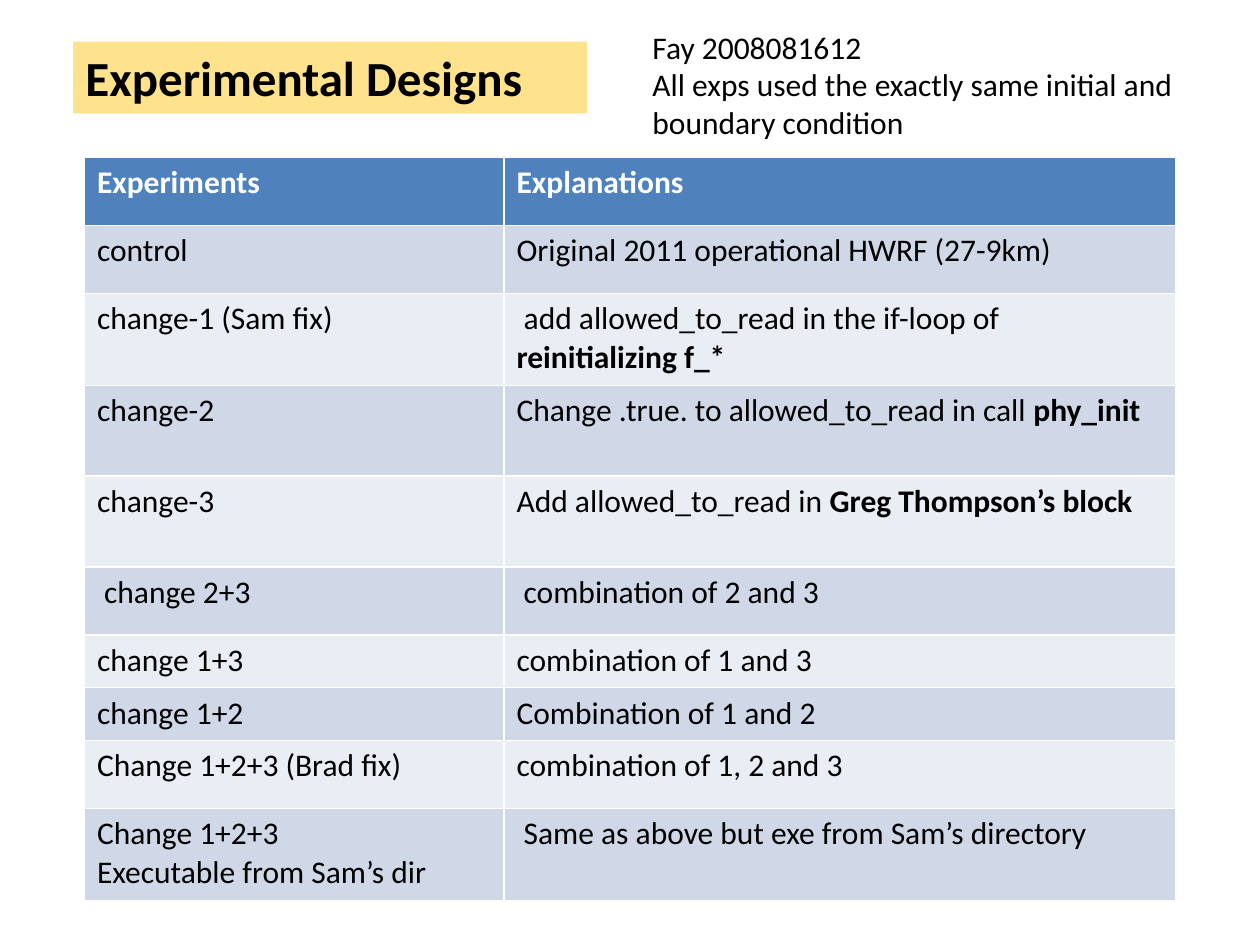
from dataclasses import dataclass
from typing import NamedTuple

from pptx import Presentation
from pptx.dml.color import RGBColor
from pptx.enum.shapes import MSO_SHAPE
from pptx.enum.text import MSO_ANCHOR, MSO_AUTO_SIZE, PP_ALIGN
from pptx.oxml.ns import qn
from pptx.slide import Slide
from pptx.util import Inches, Pt
from lxml.etree import SubElement


@dataclass(frozen=True)
class Theme:
    font: str = "Calibri"
    body: int = 18
    title: int = 28
    ink: str = "000000"
    white: str = "FFFFFF"
    head: str = "4F81BD"
    bands: tuple[str, str] = ("E9EDF4", "D0D8E8")
    gold: str = "FFC000"
    alpha: int = 45


class Box(NamedTuple):
    left: float
    top: float
    width: float
    height: float

    def place(self) -> list[int]:
        return [Inches(n) for n in self]


class Row(NamedTuple):
    height: float
    name: str
    note: str
    strong: str = ""


THEME = Theme()
COLS = (3.33, 5.33)
ROWS = [
    Row(0.54, "Experiments", "Explanations"),
    Row(0.54, "control", "Original 2011 operational HWRF (27-9km)"),
    Row(0.73, "change-1 (Sam fix)", " add allowed_to_read in the if-loop of ", "reinitializing f_*"),
    Row(0.72, "change-2", "Change .true. to allowed_to_read in call ", "phy_init"),
    Row(0.72, "change-3", "Add allowed_to_read in ", "Greg Thompson’s block"),
    Row(0.54, " change 2+3", " combination of 2 and 3"),
    Row(0.42, "change 1+3", "combination of 1 and 3"),
    Row(0.42, "change 1+2", "Combination of 1 and 2"),
    Row(0.54, "Change 1+2+3 (Brad fix)", "combination of 1, 2 and 3"),
    Row(0.73, "Change 1+2+3\nExecutable from Sam’s dir", " Same as above but exe from Sam’s directory"),
]


def write(frame, text: str, size: int = THEME.body, ink: str = THEME.ink,
          bold: bool = False, strong: str = "") -> None:
    frame.text = text
    frame.word_wrap = True
    if strong:
        run = frame.paragraphs[-1].add_run()
        run.text = strong
        run.font.bold = True
    for para in frame.paragraphs:
        para.alignment = PP_ALIGN.LEFT
        font = para.font
        font.name = THEME.font
        font.size = Pt(size)
        font.bold = bold
        font.color.rgb = RGBColor.from_string(ink)


def paint(fill, color: str) -> None:
    fill.solid()
    fill.fore_color.rgb = RGBColor.from_string(color)


def add_grid(slide: Slide, box: Box) -> None:
    table = slide.shapes.add_table(len(ROWS), len(COLS), *box.place()).table
    for col, width in zip(table.columns, COLS):
        col.width = Inches(width)
    for i, row in enumerate(ROWS):
        table.rows[i].height = Inches(row.height)
        head = i == 0
        for j, (text, strong) in enumerate([(row.name, ""), (row.note, row.strong)]):
            cell = table.cell(i, j)
            paint(cell.fill, THEME.head if head else THEME.bands[i % 2])
            write(cell.text_frame, text, ink=THEME.white if head else THEME.ink,
                  bold=head, strong=strong)


def add_title(slide: Slide, box: Box, text: str) -> None:
    shape = slide.shapes.add_shape(MSO_SHAPE.RECTANGLE, *box.place())
    shape.shadow.inherit = False
    shape.line.fill.background()
    paint(shape.fill, THEME.gold)
    color = next(shape.element.spPr.iter(qn("a:srgbClr")))
    SubElement(color, qn("a:alpha"), val=str(THEME.alpha * 1000))
    write(shape.text_frame, text, THEME.title, bold=True)
    shape.text_frame.vertical_anchor = MSO_ANCHOR.TOP
    shape.text_frame.auto_size = MSO_AUTO_SIZE.SHAPE_TO_FIT_TEXT


def add_note(slide: Slide, box: Box, text: str) -> None:
    frame = slide.shapes.add_textbox(*box.place()).text_frame
    write(frame, text)
    frame.auto_size = MSO_AUTO_SIZE.SHAPE_TO_FIT_TEXT


def main() -> None:
    deck = Presentation()
    deck.slide_width, deck.slide_height = Inches(10), Inches(7.5)
    slide = deck.slides.add_slide(deck.slide_layouts[6])
    add_grid(slide, Box(0.67, 1.25, sum(COLS), sum(row.height for row in ROWS)))
    add_title(slide, Box(0.58, 0.33, 4.08, 0.57), "Experimental Designs")
    add_note(slide, Box(5.08, 0.17, 4.58, 1.01),
             "Fay 2008081612\nAll exps used the exactly same initial and boundary condition")
    deck.save("out.pptx")


if __name__ == "__main__":
    main()
